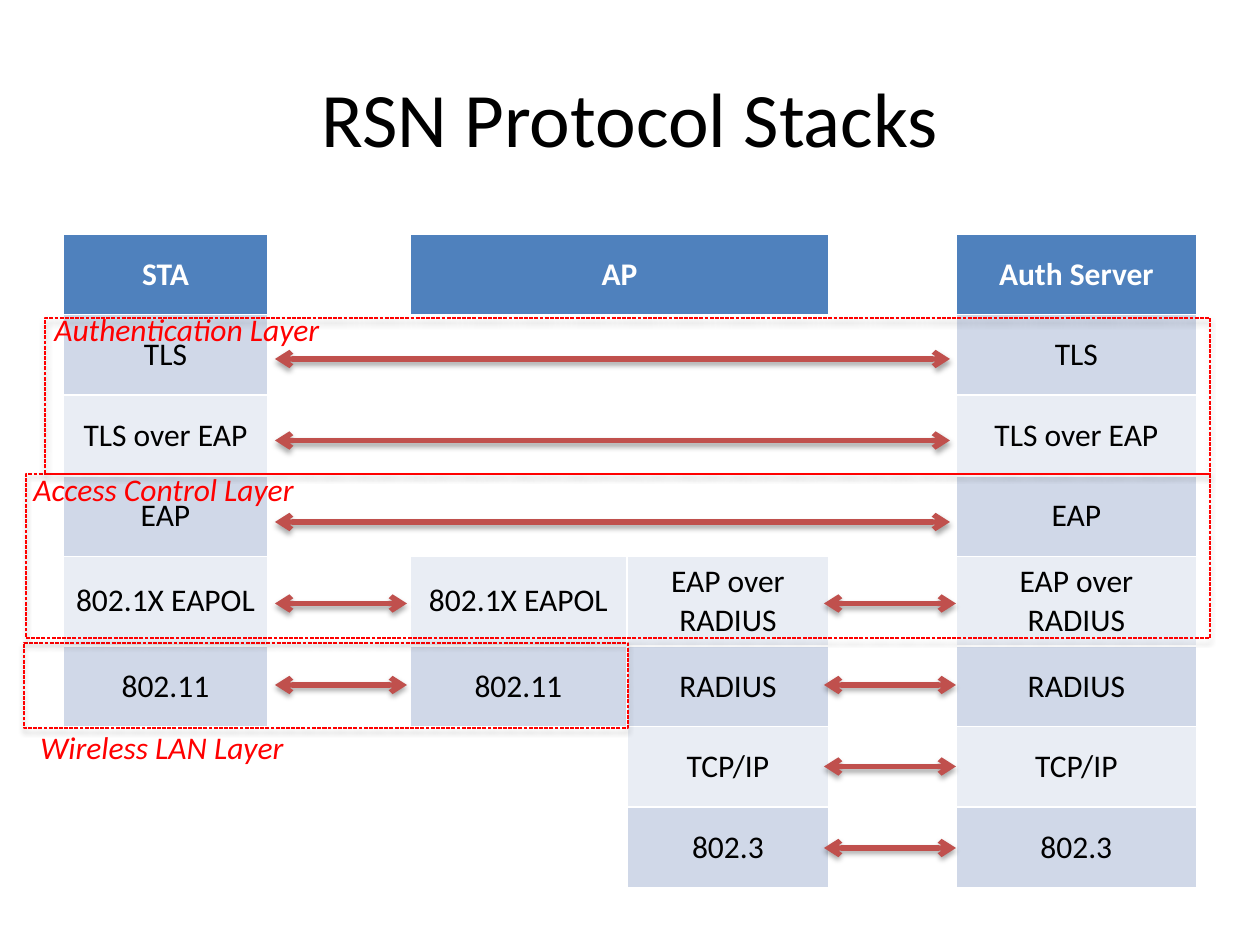
from lxml.etree import SubElement
from pptx import Presentation
from pptx.dml.color import RGBColor
from pptx.enum.dml import MSO_LINE
from pptx.enum.shapes import MSO_CONNECTOR, MSO_SHAPE
from pptx.enum.text import MSO_ANCHOR, PP_ALIGN
from pptx.oxml.ns import qn
from pptx.util import Pt

# Content
TITLE = "RSN Protocol Stacks"
STACKS = [
    ["STA", "", "AP", "", "", "Auth Server"],
    ["TLS", "", "", "", "", "TLS"],
    ["TLS over EAP", "", "", "", "", "TLS over EAP"],
    ["EAP", "", "", "", "", "EAP"],
    ["802.1X EAPOL", "", "802.1X EAPOL", "EAP over RADIUS", "", "EAP over RADIUS"],
    ["802.11", "", "802.11", "RADIUS", "", "RADIUS"],
    ["", "", "", "TCP/IP", "", "TCP/IP"],
    ["", "", "", "802.3", "", "802.3"],
]
# Links between stacks: (left, right, protocol levels below the header)
LINKS = [
    (275, 950, [0, 1, 2]),
    (275, 407, [3, 4]),
    (824, 956, [3, 4, 5, 6]),
]
# Layers: name, outline box and label box as left, top, width, height
LAYERS = [
    ("Wireless LAN Layer", (24, 643, 604, 85), (28, 722, 278, 50)),
    ("Access Control Layer", (26, 474, 1184, 164), (21, 464, 297, 50)),
    ("Authentication Layer", (45, 318, 1165, 156), (42, 304, 301, 50)),
]

# Layout and style
COLUMN_WIDTHS = [205, 142, 217, 202, 127, 241]
TABLE_LEFT, TABLE_TOP, TABLE_HEIGHT = 63, 234, 645
FIRST_LINK_Y, LINK_PITCH = 359, 81.5
HEADER, BANDS, BLANK = "4F81BD", ["E9EDF4", "D0D8E8"], "FFFFFF"
LINK_COLOR, LAYER_COLOR = "C0504D", "FF0000"
FONT = "Calibri"


def px(length):
    return round(length * 914400 / 126)


def rgb(color):
    return RGBColor.from_string(color)


def add_run(paragraph, text, size, color, bold=False, italic=False):
    run = paragraph.add_run()
    run.text = text
    font = run.font
    font.name, font.size, font.bold, font.italic = FONT, Pt(size), bold, italic
    font.color.rgb = rgb(color)


def add_shadow(shape):
    effects = SubElement(shape._element.spPr, qn("a:effectLst"))
    shadow = SubElement(effects, qn("a:outerShdw"), blurRad=str(Pt(3.1)),
                        dist=str(Pt(1.8)), dir="5400000", rotWithShape="0")
    black = SubElement(shadow, qn("a:srgbClr"), val="000000")
    SubElement(black, qn("a:alpha"), val="35000")


presentation = Presentation()
presentation.slide_width, presentation.slide_height = px(1260), px(945)
slide = presentation.slides.add_slide(presentation.slide_layouts[5])

# Title
title = slide.shapes.title
title.left, title.top, title.width, title.height = map(px, (63, 38, 1134, 157))
title.text_frame.vertical_anchor = MSO_ANCHOR.MIDDLE
title_line = title.text_frame.paragraphs[0]
title_line.alignment = PP_ALIGN.CENTER
add_run(title_line, TITLE, 44, "000000")

# Protocol stacks
stacks = slide.shapes.add_table(
    len(STACKS), len(COLUMN_WIDTHS), px(TABLE_LEFT), px(TABLE_TOP),
    px(sum(COLUMN_WIDTHS)), px(TABLE_HEIGHT)).table
for column, width in zip(stacks.columns, COLUMN_WIDTHS):
    column.width = px(width)
stacks.cell(0, 2).merge(stacks.cell(0, 3))
for level, protocols in enumerate(STACKS):
    stacks.rows[level].height = px(TABLE_HEIGHT / len(STACKS))
    for position, protocol in enumerate(protocols):
        cell = stacks.cell(level, position)
        band = BANDS[level % 2] if level else HEADER
        cell.fill.solid()
        cell.fill.fore_color.rgb = rgb(band if protocol else BLANK)
        cell.vertical_anchor = MSO_ANCHOR.MIDDLE
        if protocol:
            line = cell.text_frame.paragraphs[0]
            line.alignment = PP_ALIGN.CENTER
            add_run(line, protocol, 18, "000000" if level else "FFFFFF",
                    bold=level == 0)

# Links
for left, right, levels in LINKS:
    for level in levels:
        y = px(FIRST_LINK_Y + level * LINK_PITCH)
        link = slide.shapes.add_connector(
            MSO_CONNECTOR.STRAIGHT, px(left), y, px(right), y)
        link.line.color.rgb = rgb(LINK_COLOR)
        link.line.width = Pt(3)
        for end in ("a:headEnd", "a:tailEnd"):
            SubElement(link.line._get_or_add_ln(), qn(end), type="arrow")
        add_shadow(link)

# Layers
for name, outline_box, label_box in LAYERS:
    outline = slide.shapes.add_shape(MSO_SHAPE.RECTANGLE, *map(px, outline_box))
    outline.fill.background()
    outline.line.color.rgb = rgb(LAYER_COLOR)
    outline.line.width = Pt(0.75)
    outline.line.dash_style = MSO_LINE.SQUARE_DOT
    add_shadow(outline)
    label = slide.shapes.add_textbox(*map(px, label_box))
    label.text_frame.word_wrap = False
    add_run(label.text_frame.paragraphs[0], name, 18, LAYER_COLOR, italic=True)

presentation.save("out.pptx")
